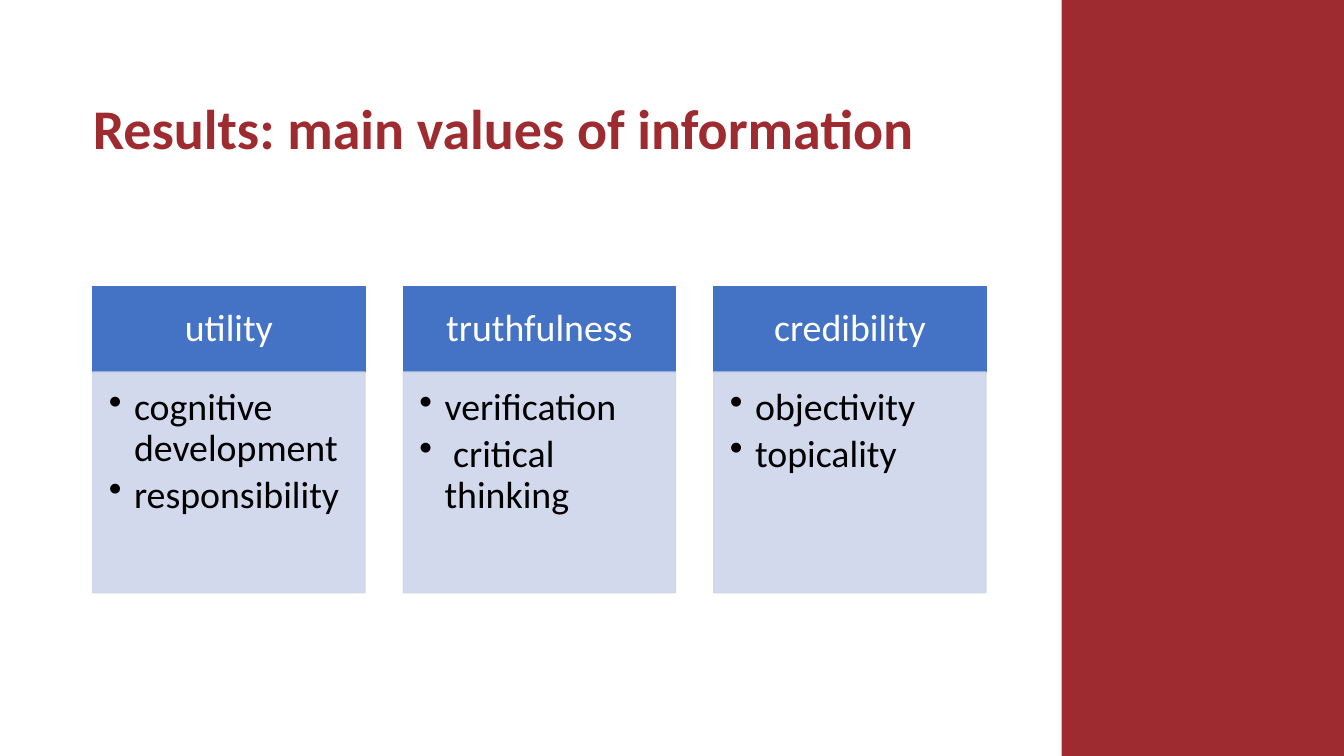
import pptx
import pptx.dml.color
import pptx.enum.shapes
import pptx.enum.text
import pptx.oxml.ns
import pptx.util
from lxml import etree

Inches, Pt = pptx.util.Inches, pptx.util.Pt
ALIGN = pptx.enum.text.PP_ALIGN
ANCHOR = pptx.enum.text.MSO_ANCHOR

# Content
TITLE = "Results: main values of information"
VALUES = [
    ("utility", ["cognitive development", "responsibility"]),
    ("truthfulness", ["verification", " critical thinking"]),
    ("credibility", ["objectivity", "topicality"]),
]

THEME = {
    "font": "Calibri", "title_size": 40, "value_size": 27,
    "accent": "9E2B2F", "header": "4472C4", "panel": "CFD5EA",
    "header_text": "FFFFFF", "panel_text": "000000", "panel_opacity": 90,
}

# Layout, in inches
SLIDE_W, SLIDE_H = 13.33, 7.5
BAND_LEFT = 10.53
LEFT, COLUMN_W, COLUMN_STEP = 0.92, 2.7, 3.08
HEADER_TOP, HEADER_H, PANEL_H = 2.84, 0.85, 2.19


def rgb(code):
    return pptx.dml.color.RGBColor.from_string(code)


def add_block(slide, box, color, opacity=100, outlined=True):
    block = slide.shapes.add_shape(
        pptx.enum.shapes.MSO_SHAPE.RECTANGLE, *map(Inches, box))
    block.shadow.inherit = False
    block.fill.solid()
    block.fill.fore_color.rgb = rgb(color)
    if outlined:
        block.line.color.rgb = rgb(color)
        block.line.width = Pt(1)
    else:
        block.line.fill.background()
    if opacity < 100:
        for tint in block._element.spPr.iter(pptx.oxml.ns.qn("a:srgbClr")):
            etree.SubElement(tint, pptx.oxml.ns.qn("a:alpha"), val=str(opacity * 1000))
    return block


def add_bullet(paragraph):
    properties = paragraph._p.get_or_add_pPr()
    properties.set("marL", str(Inches(0.25)))
    properties.set("indent", str(-Inches(0.25)))
    etree.SubElement(properties, pptx.oxml.ns.qn("a:buChar"), char="•")


def write(shape, lines, *, size, color, insets, bold=False, align=ALIGN.LEFT,
          anchor=ANCHOR.MIDDLE, bullets=False, space_after=0):
    frame = shape.text_frame
    frame.word_wrap = True
    frame.vertical_anchor = anchor
    (frame.margin_left, frame.margin_top,
     frame.margin_right, frame.margin_bottom) = map(Inches, insets)
    for index, line in enumerate(lines):
        paragraph = frame.add_paragraph() if index else frame.paragraphs[0]
        if bullets:
            add_bullet(paragraph)
        paragraph.alignment = align
        paragraph.line_spacing = 0.9
        paragraph.space_after = Pt(space_after)
        run = paragraph.add_run()
        run.text = line
        run.font.name = THEME["font"]
        run.font.size = Pt(size)
        run.font.bold = bold
        run.font.color.rgb = rgb(color)


def main():
    deck = pptx.Presentation()
    deck.slide_width, deck.slide_height = Inches(SLIDE_W), Inches(SLIDE_H)
    slide = deck.slides.add_slide(deck.slide_layouts[6])

    # Side band and title
    add_block(slide, (BAND_LEFT, 0, SLIDE_W - BAND_LEFT, SLIDE_H),
              THEME["accent"], outlined=False)
    title = slide.shapes.add_textbox(*map(Inches, (LEFT, 0.77, 8.88, 1.07)))
    write(title, [TITLE], size=THEME["title_size"], color=THEME["accent"],
          insets=(0, 0.05, 0.1, 0.05), bold=True)

    # One column per value: header above its panel
    for column, (value, aspects) in enumerate(VALUES):
        left = LEFT + column * COLUMN_STEP
        header = add_block(slide, (left, HEADER_TOP, COLUMN_W, HEADER_H), THEME["header"])
        write(header, [value], size=THEME["value_size"], color=THEME["header_text"],
              insets=(0.21, 0.12, 0.21, 0.12), align=ALIGN.CENTER)
        panel = add_block(slide, (left, HEADER_TOP + HEADER_H, COLUMN_W, PANEL_H),
                          THEME["panel"], opacity=THEME["panel_opacity"])
        write(panel, aspects, size=THEME["value_size"], color=THEME["panel_text"],
              insets=(0.16, 0.16, 0.21, 0.24), anchor=ANCHOR.TOP,
              bullets=True, space_after=4)

    deck.save("out.pptx")


if __name__ == "__main__":
    main()
